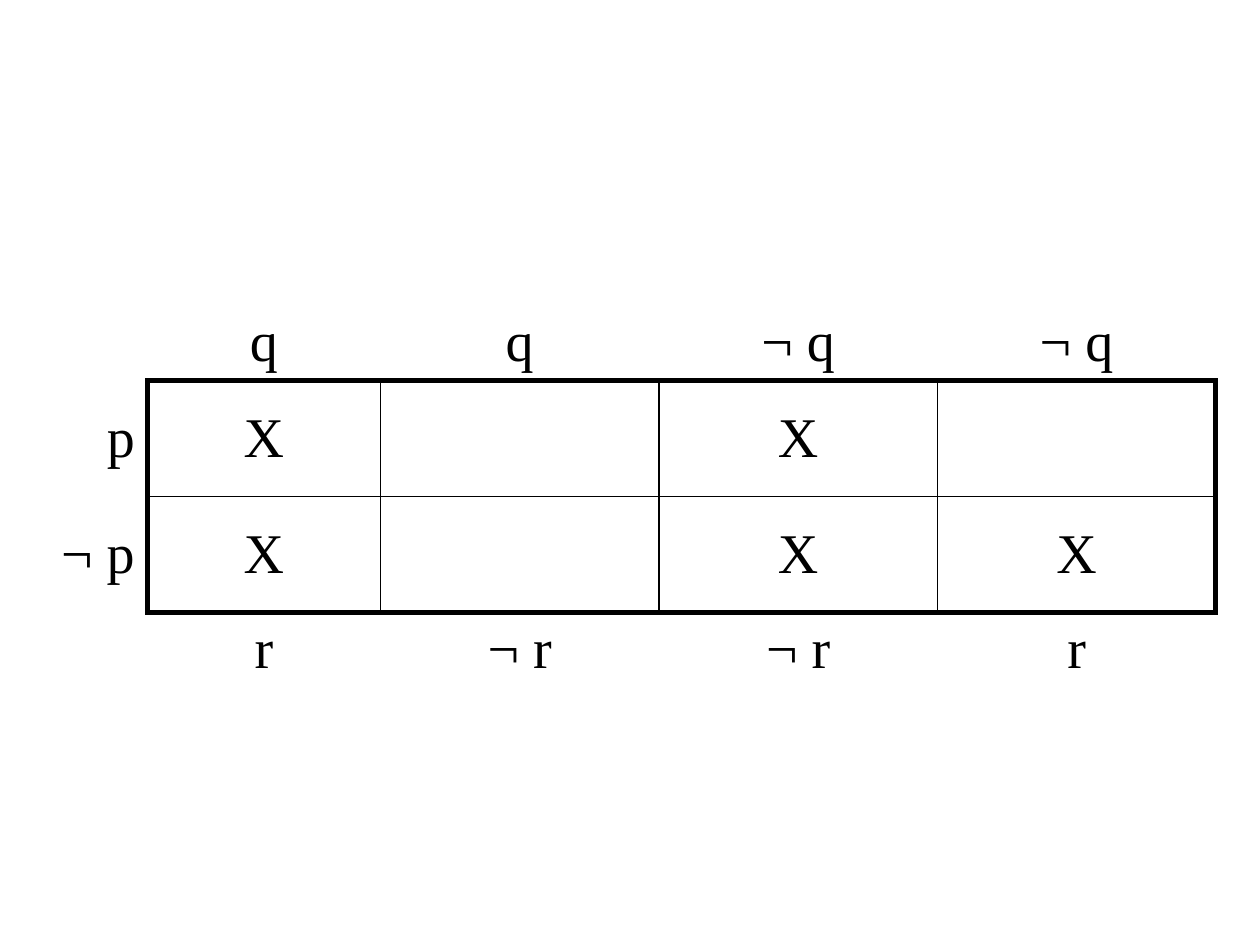
"""Build a slide with a three-variable Karnaugh map."""
import lxml.etree
import pptx
import pptx.dml.color
import pptx.enum.text
import pptx.oxml.ns
import pptx.util

ROWS = [
    ["", "q", "q", "¬ q", "¬ q"],
    ["p", "X", "", "X", ""],
    ["¬ p", "X", "", "X", "X"],
    ["", "r", "¬ r", "¬ r", "r"],
]
THEME = {
    "font": "Times New Roman",
    "size": 32,
    "ink": "000000",
    "outer": 3,
    "inner": 1,
    "space": 6.4,
}
LEFT, TOP = 0.2, 2.1
COLUMN_WIDTHS = [0.97, 1.85, 2.21, 2.21, 2.21]
ROW_HEIGHT = 0.92
FIRST, LAST_ROW, LAST_COLUMN = 1, 2, 4
ALIGN = pptx.enum.text.PP_ALIGN
ANCHOR = pptx.enum.text.MSO_ANCHOR
ROW_ANCHORS = [ANCHOR.BOTTOM, ANCHOR.MIDDLE, ANCHOR.MIDDLE, ANCHOR.TOP]


def edge_width(edge, last, position, last_position):
    """Return the width of a grid edge in points, or None outside the grid."""
    if not (FIRST <= edge <= last + 1 and FIRST <= position <= last_position):
        return None
    return THEME["outer"] if edge in (FIRST, last + 1) else THEME["inner"]


def draw_borders(cell, row, column):
    """Give a cell its four borders."""
    edges = {
        "a:lnL": edge_width(column, LAST_COLUMN, row, LAST_ROW),
        "a:lnR": edge_width(column + 1, LAST_COLUMN, row, LAST_ROW),
        "a:lnT": edge_width(row, LAST_ROW, column, LAST_COLUMN),
        "a:lnB": edge_width(row + 1, LAST_ROW, column, LAST_COLUMN),
    }
    qn = pptx.oxml.ns.qn
    properties = cell._tc.get_or_add_tcPr()
    for tag, width in edges.items():
        line = lxml.etree.SubElement(properties, qn(tag))
        if width is None:
            lxml.etree.SubElement(line, qn("a:noFill"))
        else:
            line.set("w", str(pptx.util.Pt(width)))
            fill = lxml.etree.SubElement(line, qn("a:solidFill"))
            lxml.etree.SubElement(fill, qn("a:srgbClr"), val=THEME["ink"])


def write_text(cell, text, row, column):
    """Write one label or mark into a cell."""
    cell.vertical_anchor = ROW_ANCHORS[row]
    para = cell.text_frame.paragraphs[0]
    para_format = {
        "alignment": ALIGN.CENTER if column else ALIGN.RIGHT,
        "space_before": pptx.util.Pt(THEME["space"]),
    }
    for name, value in para_format.items():
        setattr(para, name, value)
    span = para.add_run()
    span.text = text
    span_format = {"name": THEME["font"], "size": pptx.util.Pt(THEME["size"])}
    for name, value in span_format.items():
        setattr(span.font, name, value)
    span.font.color.rgb = pptx.dml.color.RGBColor.from_string(THEME["ink"])


def main():
    """Build and save the deck."""
    inches = pptx.util.Inches
    deck = pptx.Presentation()
    deck.slide_width, deck.slide_height = inches(10), inches(7.5)
    page = deck.slides.add_slide(deck.slide_layouts[6])
    table = page.shapes.add_table(
        len(ROWS), len(COLUMN_WIDTHS), inches(LEFT), inches(TOP),
        inches(sum(COLUMN_WIDTHS)), inches(ROW_HEIGHT * len(ROWS)),
    ).table
    table.first_row = table.horz_banding = False
    for column, width in zip(table.columns, COLUMN_WIDTHS):
        column.width = inches(width)
    for row, texts in enumerate(ROWS):
        table.rows[row].height = inches(ROW_HEIGHT)
        for column, text in enumerate(texts):
            cell = table.cell(row, column)
            draw_borders(cell, row, column)
            cell.fill.background()
            if text:
                write_text(cell, text, row, column)
    deck.save("out.pptx")


if __name__ == "__main__":
    main()
